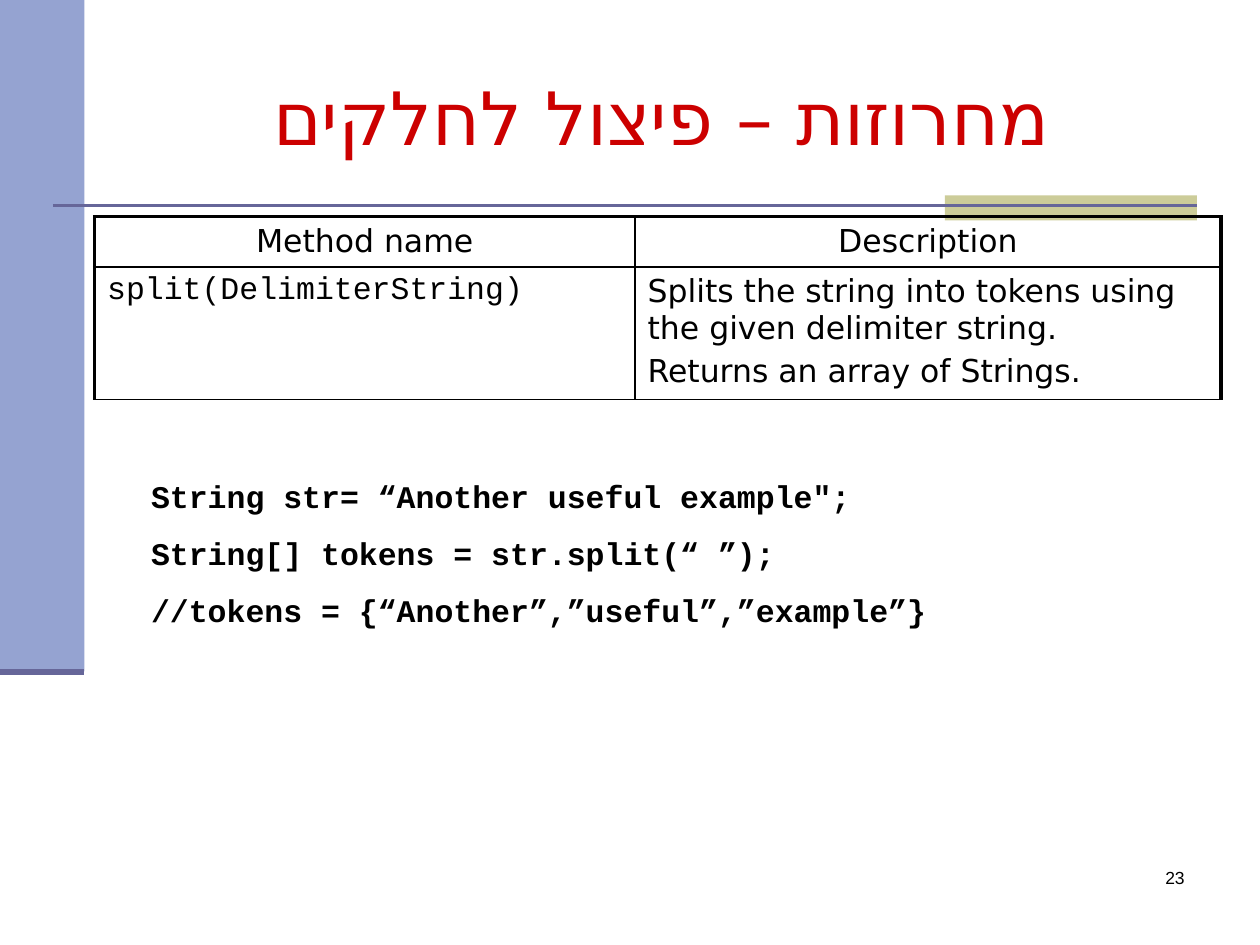
"""Build a slide on splitting strings into tokens."""
from lxml.etree import SubElement
from pptx import Presentation
from pptx.dml.color import RGBColor
from pptx.enum.shapes import MSO_CONNECTOR, MSO_SHAPE
from pptx.enum.text import MSO_ANCHOR, PP_ALIGN
from pptx.oxml.ns import qn
from pptx.util import Inches, Pt

COLORS = {"blue": "95A3D1", "khaki": "CCCC99", "rule": "666699",
          "title": "CC0000", "text": "000000"}
SANS, MONO = "DejaVu Sans", "Courier New"

PANELS = [((0, 0, 0.67, 5.33), "blue"), ((7.5, 1.55, 2, 0.2), "khaki")]
RULES = [((0.42, 1.63, 9.5, 1.63), 1.5), ((0, 5.33, 0.67, 5.33), 3.5)]
TITLE = "מחרוזות – פיצול לחלקים"
SLIDE_NUMBER = "23"
CODE = [
    "String str= “Another useful example\";",
    "String[] tokens = str.split(“ ”);",
    "//tokens = {“Another”,”useful”,”example”}",
]
TABLE_BOX = (0.75, 1.72, 8.94, 1.41)
COLUMN_WIDTHS = [4.29, 4.65]
ROW_HEIGHTS = [0.39, 1.02]
CELLS = [
    [(["Method name"], SANS), (["Description"], SANS)],
    [(["split(DelimiterString)"], MONO),
     (["Splits the string into tokens using the given delimiter string.",
       "Returns an array of Strings."], SANS)],
]
OUTER, INNER = 2.25, 1


def color(name):
    return RGBColor.from_string(COLORS[name])


def write(frame, lines, font, paragraph_format):
    for index, line in enumerate(lines):
        paragraph = frame.add_paragraph() if index else frame.paragraphs[0]
        for name, value in paragraph_format.items():
            setattr(paragraph, name, value)
        run = paragraph.add_run()
        run.text = line
        values = {"color": "text", **font}
        run.font.color.rgb = color(values.pop("color"))
        for name, value in values.items():
            setattr(run.font, name, value)


def add_text(slide, box, lines, font, paragraph_format, anchor=MSO_ANCHOR.TOP):
    frame = slide.shapes.add_textbox(*map(Inches, box)).text_frame
    frame.word_wrap = True
    frame.vertical_anchor = anchor
    write(frame, lines, font, paragraph_format)
    return frame


def add_panel(slide, box, fill):
    shape = slide.shapes.add_shape(MSO_SHAPE.RECTANGLE, *map(Inches, box))
    shape.shadow.inherit = False
    shape.fill.solid()
    shape.fill.fore_color.rgb = color(fill)
    shape.line.fill.background()


def add_rule(slide, ends, width):
    connector = slide.shapes.add_connector(MSO_CONNECTOR.STRAIGHT, *map(Inches, ends))
    connector.line.color.rgb = color("rule")
    connector.line.width = Pt(width)
    SubElement(connector._element.spPr, qn("a:effectLst"))


def add_title(slide):
    frame = add_text(slide, (1, 0.3, 8.5, 1.25), [TITLE],
                     {"name": "Times New Roman", "size": Pt(42), "color": "title"},
                     {"alignment": PP_ALIGN.CENTER}, MSO_ANCHOR.MIDDLE)
    paragraph = frame.paragraphs[0]
    paragraph._p.get_or_add_pPr().set("rtl", "1")
    properties = paragraph.runs[0]._r.get_or_add_rPr()
    properties.set("lang", "he-IL")
    SubElement(properties, qn("a:cs"), typeface=SANS)


def set_borders(cell, widths):
    properties = cell._tc.get_or_add_tcPr()
    for position, (side, width) in enumerate(widths.items()):
        line = SubElement(properties, qn(f"a:ln{side}"), w=str(Pt(width)))
        fill = SubElement(line, qn("a:solidFill"))
        SubElement(fill, qn("a:srgbClr"), val=COLORS["text"])
        properties.remove(line)
        properties.insert(position, line)


def add_method_table(slide):
    table = slide.shapes.add_table(len(CELLS), len(COLUMN_WIDTHS),
                                   *map(Inches, TABLE_BOX)).table
    for column, width in zip(table.columns, COLUMN_WIDTHS):
        column.width = Inches(width)
    for row, height in zip(table.rows, ROW_HEIGHTS):
        row.height = Inches(height)
    last_column = len(COLUMN_WIDTHS) - 1
    for row_index, row in enumerate(CELLS):
        for column_index, (lines, font_name) in enumerate(row):
            cell = table.cell(row_index, column_index)
            cell.fill.background()
            alignment = PP_ALIGN.LEFT if row_index else PP_ALIGN.CENTER
            write(cell.text_frame, lines,
                  {"name": font_name, "size": Pt(18), "bold": False},
                  {"alignment": alignment, "space_before": Pt(3.6)})
            set_borders(cell, {
                "L": INNER if column_index else OUTER,
                "R": OUTER if column_index == last_column else INNER,
                "T": INNER if row_index else OUTER,
                "B": INNER,
            })


def main():
    presentation = Presentation()
    presentation.slide_width, presentation.slide_height = Inches(10), Inches(7.5)
    slide = presentation.slides.add_slide(presentation.slide_layouts[6])
    for box, fill in PANELS:
        add_panel(slide, box, fill)
    for ends, width in RULES:
        add_rule(slide, ends, width)
    add_title(slide)
    add_text(slide, (7.42, 6.83, 2.08, 0.5), [SLIDE_NUMBER],
             {"name": "Arial", "size": Pt(10)}, {"alignment": PP_ALIGN.RIGHT})
    add_method_table(slide)
    add_text(slide, (1.1, 3.59, 7.09, 1.46), CODE,
             {"name": MONO, "size": Pt(18), "bold": True}, {"line_spacing": 1.5})
    presentation.save("out.pptx")


if __name__ == "__main__":
    main()
